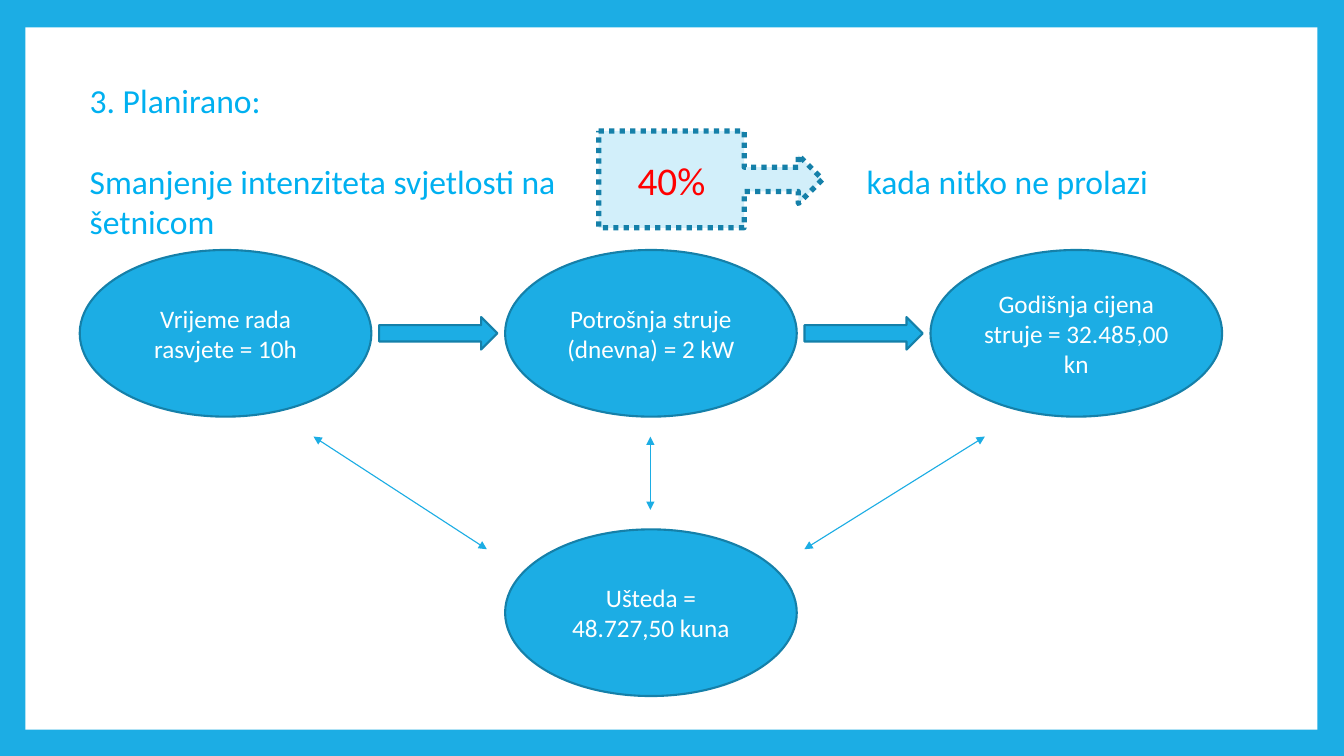
from dataclasses import dataclass
from typing import Optional

import lxml.etree
import pptx
import pptx.dml.color
import pptx.enum.dml
import pptx.enum.shapes
import pptx.enum.text
import pptx.oxml.ns
import pptx.shapes.autoshape
import pptx.slide
import pptx.util

Cm = pptx.util.Cm
Kind = pptx.enum.shapes.MSO_SHAPE


@dataclass(frozen=True)
class Theme:
    font: str = "Calibri"
    blue: str = "1CADE4"
    outline: str = "1580A9"
    pale: str = "D2EFFA"
    white: str = "FFFFFF"
    heading: str = "00B0F0"
    accent: str = "FF0000"
    heading_size: float = 24
    callout_size: float = 28
    body_size: float = 18
    outline_width: float = 1.5
    callout_width: float = 3.75
    link_width: float = 0.79


@dataclass(frozen=True)
class Figure:
    kind: Kind
    left: float
    top: float
    width: float
    height: float
    fill: str
    outline: Optional[str] = None
    outline_width: float = 0
    dotted: bool = False
    text: str = ""
    size: float = 0
    color: str = ""


@dataclass(frozen=True)
class Link:
    start: tuple[float, float]
    end: tuple[float, float]


THEME = Theme()
COLUMN_LEFT, COLUMN_STEP = 2.01, 10.72
TOP_ROW, BOTTOM_ROW = 6.3, 13.34
OVAL_WIDTH, OVAL_HEIGHT = 7.35, 4.2
ARROW_WIDTH, ARROW_HEIGHT = 2.98, 0.82


def rgb(color: str) -> pptx.dml.color.RGBColor:
    return pptx.dml.color.RGBColor.from_string(color)


def add_span(para, text: str, size: float, color: str) -> None:
    span = para.add_run()
    span.text = text
    span.font.name = THEME.font
    span.font.size = pptx.util.Pt(size)
    span.font.color.rgb = rgb(color)


def draw_figure(page: pptx.slide.Slide, figure: Figure) -> pptx.shapes.autoshape.Shape:
    box = page.shapes.add_shape(
        figure.kind, Cm(figure.left), Cm(figure.top), Cm(figure.width), Cm(figure.height)
    )
    box.shadow.inherit = False
    box.fill.solid()
    box.fill.fore_color.rgb = rgb(figure.fill)
    if figure.outline:
        box.line.color.rgb = rgb(figure.outline)
        box.line.width = pptx.util.Pt(figure.outline_width)
    else:
        box.line.fill.background()
    if figure.dotted:
        box.line.dash_style = pptx.enum.dml.MSO_LINE.ROUND_DOT
    if figure.text:
        frame = box.text_frame
        frame.word_wrap = True
        frame.vertical_anchor = pptx.enum.text.MSO_ANCHOR.MIDDLE
        para = frame.paragraphs[0]
        para.alignment = pptx.enum.text.PP_ALIGN.CENTER
        add_span(para, figure.text, figure.size, figure.color)
    return box


def draw_link(page: pptx.slide.Slide, link: Link) -> None:
    connector = page.shapes.add_connector(
        pptx.enum.shapes.MSO_CONNECTOR.STRAIGHT, *map(Cm, link.start + link.end)
    )
    connector.line.color.rgb = rgb(THEME.blue)
    connector.line.width = pptx.util.Pt(THEME.link_width)
    line = connector.line._get_or_add_ln()
    for tag in ("a:headEnd", "a:tailEnd"):
        lxml.etree.SubElement(line, pptx.oxml.ns.qn(tag), type="triangle")
    lxml.etree.SubElement(connector._element.spPr, pptx.oxml.ns.qn("a:effectLst"))


def draw_heading(page: pptx.slide.Slide) -> None:
    box = page.shapes.add_textbox(Cm(2.01), Cm(1.88), Cm(30.28), Cm(3.33))
    frame = box.text_frame
    frame.word_wrap = True
    frame.margin_right = Cm(1)
    add_span(frame.paragraphs[0], "3. Planirano:", THEME.heading_size, THEME.heading)
    para = frame.add_paragraph()
    para.space_before = pptx.util.Pt(29)
    add_span(
        para,
        "Smanjenje intenziteta svjetlosti na\tkada nitko ne prolazi šetnicom",
        THEME.heading_size,
        THEME.heading,
    )
    stops = lxml.etree.SubElement(para._p.get_or_add_pPr(), pptx.oxml.ns.qn("a:tabLst"))
    lxml.etree.SubElement(stops, pptx.oxml.ns.qn("a:tab"), pos=str(Cm(19.58)), algn="l")


def oval(column: int, top: float, text: str) -> Figure:
    return Figure(
        Kind.OVAL, COLUMN_LEFT + column * COLUMN_STEP, top, OVAL_WIDTH, OVAL_HEIGHT,
        THEME.blue, THEME.outline, THEME.outline_width,
        text=text, size=THEME.body_size, color=THEME.white,
    )


def arrow_after(column: int) -> Figure:
    gap = COLUMN_STEP - OVAL_WIDTH
    left = COLUMN_LEFT + column * COLUMN_STEP + OVAL_WIDTH + (gap - ARROW_WIDTH) / 2
    top = TOP_ROW + (OVAL_HEIGHT - ARROW_HEIGHT) / 2
    return Figure(
        Kind.RIGHT_ARROW, left, top, ARROW_WIDTH, ARROW_HEIGHT,
        THEME.blue, THEME.outline, THEME.outline_width,
    )


PANEL = Figure(Kind.RECTANGLE, 0.64, 0.69, 32.56, 17.7, THEME.white)
STEPS = (
    "Vrijeme rada rasvjete = 10h",
    "Potrošnja struje (dnevna) = 2 kW",
    "Godišnja cijena struje = 32.485,00 kn",
)
FLOW = (
    *(oval(column, TOP_ROW, text) for column, text in enumerate(STEPS)),
    oval(1, BOTTOM_ROW, "Ušteda = 48.727,50 kuna"),
    *(arrow_after(column) for column in range(len(STEPS) - 1)),
)
LINKS = (
    Link((7.9, 11), (12.27, 13.84)),
    Link((16.39, 11), (16.39, 12.85)),
    Link((24.82, 11), (20.27, 13.84)),
)
CALLOUT = Figure(
    Kind.RIGHT_ARROW_CALLOUT, 15.09, 3.3, 5.64, 2.44,
    THEME.pale, THEME.outline, THEME.callout_width, dotted=True,
    text="40%", size=THEME.callout_size, color=THEME.accent,
)


def main() -> None:
    deck = pptx.Presentation()
    deck.slide_width, deck.slide_height = Cm(33.87), Cm(19.05)
    page = deck.slides.add_slide(deck.slide_layouts[6])
    page.background.fill.solid()
    page.background.fill.fore_color.rgb = rgb(THEME.blue)
    draw_figure(page, PANEL)
    draw_heading(page)
    for figure in FLOW:
        draw_figure(page, figure)
    for link in LINKS:
        draw_link(page, link)
    draw_figure(page, CALLOUT)
    deck.save("out.pptx")


if __name__ == "__main__":
    main()
